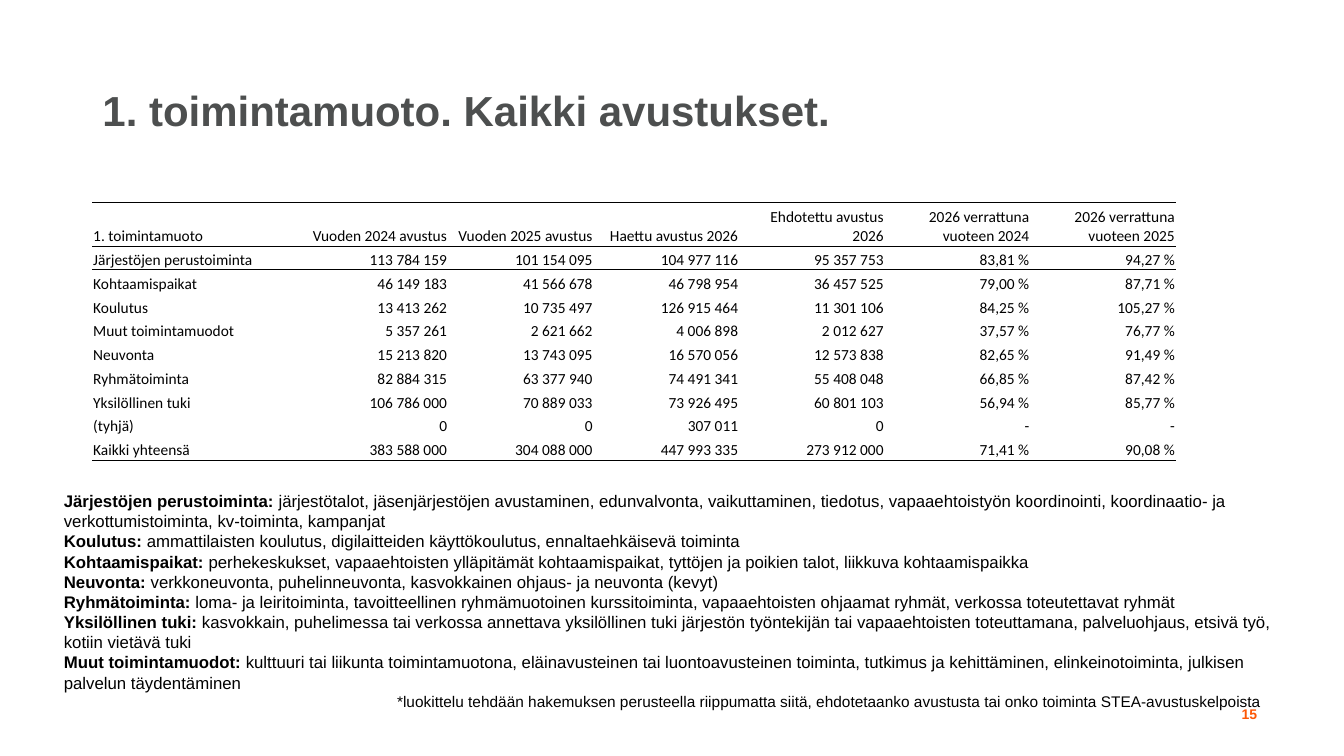
from lxml.etree import SubElement
from pptx import Presentation
from pptx.dml.color import RGBColor
from pptx.enum.text import MSO_ANCHOR, MSO_AUTO_SIZE, PP_ALIGN
from pptx.oxml.ns import qn
from pptx.util import Pt

BLACK = RGBColor(0x00, 0x00, 0x00)
GREY = RGBColor(0x4D, 0x4F, 0x4F)
ORANGE = RGBColor(0xFD, 0x57, 0x05)
PLAIN_TABLE_STYLE = "{2D5ABB26-0587-4C30-8999-92F81FD0307C}"

GRANTS = [
    ("1. toimintamuoto", "Vuoden 2024 avustus", "Vuoden 2025 avustus", "Haettu avustus 2026",
     "Ehdotettu avustus 2026", "2026 verrattuna vuoteen 2024", "2026 verrattuna vuoteen 2025"),
    ("Järjestöjen perustoiminta", "113 784 159", "101 154 095", "104 977 116",
     "95 357 753", "83,81 %", "94,27 %"),
    ("Kohtaamispaikat", "46 149 183", "41 566 678", "46 798 954", "36 457 525", "79,00 %", "87,71 %"),
    ("Koulutus", "13 413 262", "10 735 497", "126 915 464", "11 301 106", "84,25 %", "105,27 %"),
    ("Muut toimintamuodot", "5 357 261", "2 621 662", "4 006 898", "2 012 627", "37,57 %", "76,77 %"),
    ("Neuvonta", "15 213 820", "13 743 095", "16 570 056", "12 573 838", "82,65 %", "91,49 %"),
    ("Ryhmätoiminta", "82 884 315", "63 377 940", "74 491 341", "55 408 048", "66,85 %", "87,42 %"),
    ("Yksilöllinen tuki", "106 786 000", "70 889 033", "73 926 495", "60 801 103", "56,94 %", "85,77 %"),
    ("(tyhjä)", "0", "0", "307 011", "0", "-", "-"),
    ("Kaikki yhteensä", "383 588 000", "304 088 000", "447 993 335", "273 912 000", "71,41 %", "90,08 %"),
]

DEFINITIONS = [
    ("Järjestöjen perustoiminta:",
     " järjestötalot, jäsenjärjestöjen avustaminen, edunvalvonta, vaikuttaminen, tiedotus, "
     "vapaaehtoistyön koordinointi, koordinaatio- ja verkottumistoiminta, kv-toiminta, kampanjat"),
    ("Koulutus:", " ammattilaisten koulutus, digilaitteiden käyttökoulutus, ennaltaehkäisevä toiminta"),
    ("Kohtaamispaikat:",
     " perhekeskukset, vapaaehtoisten ylläpitämät kohtaamispaikat, tyttöjen ja poikien talot, "
     "liikkuva kohtaamispaikka"),
    ("Neuvonta:", " verkkoneuvonta, puhelinneuvonta, kasvokkainen ohjaus- ja neuvonta (kevyt)"),
    ("Ryhmätoiminta:",
     " loma- ja leiritoiminta, tavoitteellinen ryhmämuotoinen kurssitoiminta, "
     "vapaaehtoisten ohjaamat ryhmät, verkossa toteutettavat ryhmät"),
    ("Yksilöllinen tuki:",
     " kasvokkain, puhelimessa tai verkossa annettava yksilöllinen tuki järjestön työntekijän tai "
     "vapaaehtoisten toteuttamana, palveluohjaus, etsivä työ, kotiin vietävä tuki"),
    ("Muut toimintamuodot:",
     " kulttuuri tai liikunta toimintamuotona, eläinavusteinen tai luontoavusteinen toiminta, "
     "tutkimus ja kehittäminen, elinkeinotoiminta, julkisen palvelun täydentäminen"),
]
FOOTNOTE = ("*luokittelu tehdään hakemuksen perusteella riippumatta siitä, ehdotetaanko avustusta "
            "tai onko toiminta STEA-avustuskelpoista")


def place(shape, left, top, width, height):
    shape.left, shape.top, shape.width, shape.height = map(Pt, (left, top, width, height))


def add_run(paragraph, text, size, color=BLACK, bold=False, font="Arial"):
    run = paragraph.add_run()
    run.text = text
    run.font.name = font
    run.font.size = Pt(size)
    run.font.bold = bold
    run.font.color.rgb = color


def add_title(slide):
    title = slide.shapes.title
    place(title, 66, 29, 647, 104)
    title.text_frame.auto_size = MSO_AUTO_SIZE.NONE
    title.text_frame.vertical_anchor = MSO_ANCHOR.MIDDLE
    heading = title.text_frame.paragraphs[0]
    heading.alignment = PP_ALIGN.LEFT
    heading.line_spacing = 0.9
    add_run(heading, "1. toimintamuoto. Kaikki avustukset.", 30, GREY, bold=True)


def add_page_number(slide):
    frame = slide.shapes.add_textbox(Pt(842), Pt(500.5), Pt(63), Pt(29)).text_frame
    frame.word_wrap = True
    number = frame.paragraphs[0]
    number.alignment = PP_ALIGN.RIGHT
    add_run(number, "15", 10, ORANGE, bold=True)


def add_border(cell, side):
    border = SubElement(cell._tc.get_or_add_tcPr(), qn(f"a:{side}"), w=str(Pt(0.5)))
    fill = SubElement(border, qn("a:solidFill"))
    SubElement(fill, qn("a:srgbClr"), val=str(BLACK))


def fill_cell(cell, text, alignment, sides):
    cell.margin_left = cell.margin_right = cell.margin_top = Pt(0.6)
    cell.margin_bottom = 0
    cell.vertical_anchor = MSO_ANCHOR.BOTTOM
    for side in sides:
        add_border(cell, side)
    cell.fill.background()
    content = cell.text_frame.paragraphs[0]
    content.alignment = alignment
    add_run(content, text, 11, font="Calibri")


def add_grants_table(slide):
    row_count, column_count = len(GRANTS), len(GRANTS[0])
    grants = slide.shapes.add_table(
        row_count, column_count, Pt(66), Pt(144.7), Pt(774), Pt(184)).table
    grants.first_row = grants.horz_banding = False
    grants._tbl.tblPr.find(qn("a:tableStyleId")).text = PLAIN_TABLE_STYLE
    for index, column in enumerate(grants.columns):
        column.width = Pt(104 if index else 150)
    ruled_sides = {0: ("lnT", "lnB"), 1: ("lnT",), row_count - 1: ("lnB",)}
    for row_index, values in enumerate(GRANTS):
        grants.rows[row_index].height = Pt(17 if row_index else 31)
        for column_index, value in enumerate(values):
            alignment = PP_ALIGN.RIGHT if column_index else PP_ALIGN.LEFT
            fill_cell(grants.cell(row_index, column_index), value, alignment,
                      ruled_sides.get(row_index, ()))


def format_definition(paragraph, indent=0):
    properties = paragraph._p.get_or_add_pPr()
    properties.set("marL", str(Pt(indent)))
    properties.set("indent", "0")
    SubElement(properties, qn("a:buNone"))
    paragraph.alignment = PP_ALIGN.LEFT
    paragraph.space_before = Pt(0)


def add_definitions(slide):
    body = slide.placeholders[1]
    place(body, 38.4, 347, 903.6, 167)
    frame = body.text_frame
    frame.auto_size = MSO_AUTO_SIZE.NONE
    frame.vertical_anchor = MSO_ANCHOR.TOP
    for index, (term, meaning) in enumerate(DEFINITIONS):
        definition = frame.add_paragraph() if index else frame.paragraphs[0]
        format_definition(definition)
        add_run(definition, term, 12, bold=True)
        add_run(definition, meaning, 12)
    footnote = frame.add_paragraph()
    format_definition(footnote, indent=238)
    add_run(footnote, FOOTNOTE, 11)


def main():
    presentation = Presentation()
    presentation.slide_width = Pt(960)
    presentation.slide_height = Pt(540)
    slide = presentation.slides.add_slide(presentation.slide_layouts[1])
    add_title(slide)
    add_page_number(slide)
    add_grants_table(slide)
    add_definitions(slide)
    presentation.save("out.pptx")


if __name__ == "__main__":
    main()
